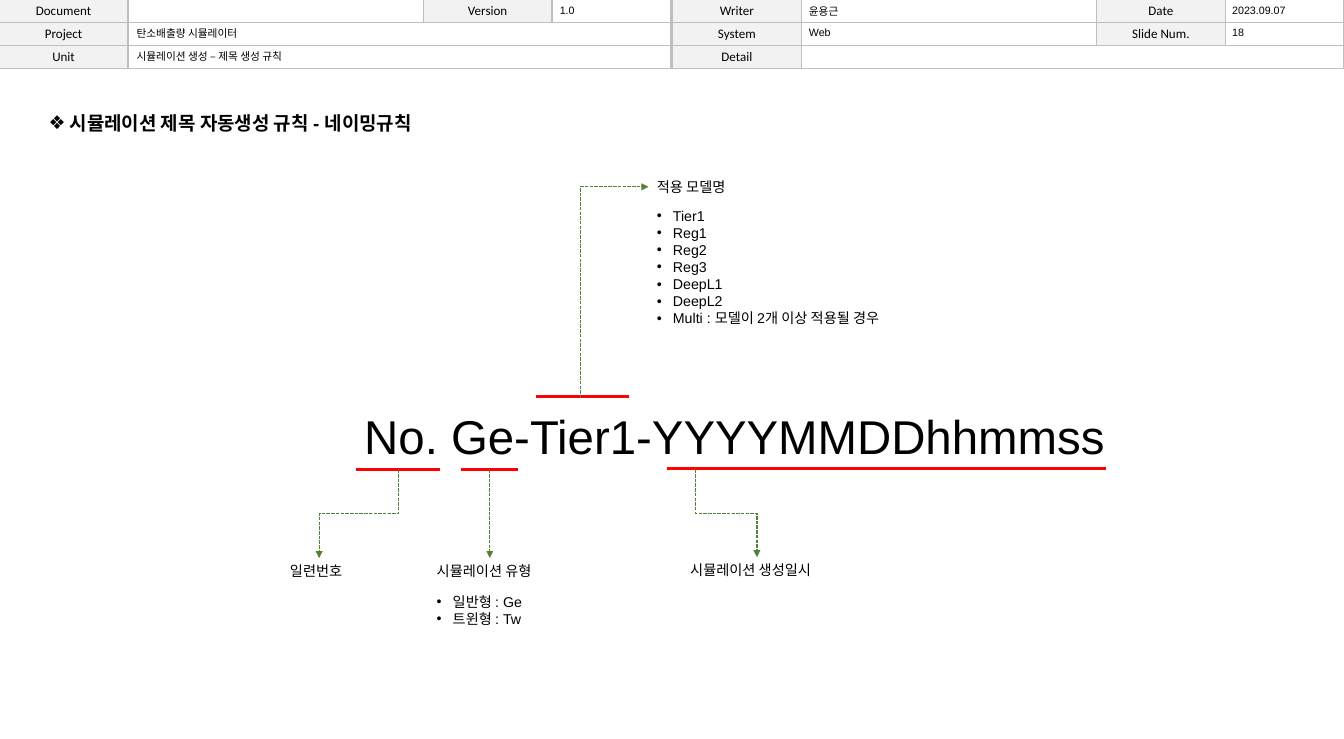
import pptx
import pptx.util
import pptx.dml.color
import pptx.enum.dml
import pptx.enum.shapes
import pptx.enum.text
import pptx.oxml
import pptx.oxml.ns

Pt = pptx.util.Pt
qn = pptx.oxml.ns.qn
KIND = pptx.enum.shapes.MSO_CONNECTOR

# Content
LABELS = [  # label, column slot, row
    ("Document", 0, 0), ("Project", 0, 1), ("Unit", 0, 2),
    ("Writer", 2, 0), ("System", 2, 1), ("Detail", 2, 2),
    ("Version", 1, 0), ("Date", 3, 0), ("Slide Num.", 3, 1),
]
VALUES = [  # row, column, text
    (0, 3, "1.0"), (0, 5, "윤용근"), (0, 7, "2023.09.07"),
    (1, 1, "탄소배출량 시뮬레이터"), (1, 5, "Web"), (1, 7, "18"),
    (2, 1, "시뮬레이션 생성 – 제목 생성 규칙"),
]
MERGES = [(1, 1), (2, 1), (2, 5)]  # row, first of three columns
TEXTS = [  # left, top, width, height, style, bullet, lines
    (300.24, 339.84, 641.52, 55.44, "code", None, ["No. Ge-Tier1-YYYYMMDDhhmmss"]),
    (237.6, 470.88, 63.36, 21.6, "note", None, ["일련번호"]),
    (361.44, 470.88, 103.68, 21.6, "note", None, ["시뮬레이션 유형"]),
    (361.44, 496.8, 90.72, 36, "note", "•", ["일반형 : Ge", "트윈형 : Tw"]),
    (547.2, 146.88, 79.2, 21.6, "note", None, ["적용 모델명"]),
    (547.2, 171.36, 224.64, 108.72, "note", "•",
     ["Tier1", "Reg1", "Reg2", "Reg3", "DeepL1", "DeepL2",
      "Multi : 모델이 2개 이상 적용될 경우"]),
    (575.28, 470.16, 128.16, 21.6, "note", None, ["시뮬레이션 생성일시"]),
    (33.84, 90.72, 360.72, 26.64, "title", "❖",
     [" 시뮬레이션 제목 자동생성 규칙 - 네이밍규칙"]),
]
MARKS = [  # left, right, y
    (300.24, 371.52, 396), (388.8, 437.04, 396),
    (452.16, 530.64, 334.8), (563.04, 933.12, 395.28),
]
ARROWS = [  # from x, y, to x, y, number of bends
    (336.24, 396, 269.28, 470.88, 2), (413.28, 396, 413.28, 470.88, 0),
    (489.6, 336.24, 547.2, 157.68, 1), (586.8, 396, 638.64, 470.16, 2),
]

# Theme and measures
THEME = {
    "ink": "000000", "grid": "BFBFBF", "label": "F2F2F2",
    "mark": "FF0000", "arrow": "548235",
    "head": ("Calibri", 11, False), "cell": ("Arial", 9, False),
    "code": ("Arial", 40, False), "note": ("Arial", 12, False),
    "title": ("Arial", 16, True),
}
WIDE, HIGH = 1134, 623.52
EDGE, BAR = -0.72, 19.44
HALF, LABEL = 567.36, 108.72
SLOTS = [EDGE, 357.12, 567.36, 925.2]
COLS = [108, 249.12, 108, 102.24] * 2
ROW = 18.72
INDENT = 13.5

deck = pptx.Presentation()
deck.slide_width, deck.slide_height = Pt(WIDE), Pt(HIGH)
slide = deck.slides.add_slide(deck.slide_layouts[6])
parts = slide.shapes


def color(name):
    return pptx.dml.color.RGBColor.from_string(THEME[name])


def write(para, text, style):
    run = para.add_run()
    run.text = text
    run.font.name, size, run.font.bold = THEME[style]
    run.font.size = Pt(size)
    run.font.color.rgb = color("ink")


def block(left, top, width, fill=None):
    rect = parts.add_shape(pptx.enum.shapes.MSO_SHAPE.RECTANGLE,
                           Pt(left), Pt(top), Pt(width), Pt(BAR))
    rect.shadow.inherit = False
    if fill:
        rect.fill.solid()
        rect.fill.fore_color.rgb = color(fill)
    else:
        rect.fill.background()
    rect.line.color.rgb = color("grid")
    rect.line.width = Pt(1)
    return rect


def link(kind, ends, tint, width):
    line = parts.add_connector(kind, *[Pt(n) for n in ends])
    line.line.color.rgb = color(tint)
    line.line.width = Pt(width)
    pptx.oxml.ns  # namespace helpers
    props = line._element.spPr
    props.append(props.makeelement(qn("a:effectLst"), {}))
    return line


def arrow(x1, y1, x2, y2, bends):
    kind, ends = KIND.STRAIGHT, (x1, y1, x2, y2)
    if bends:  # the unturned frame swaps width and height about the centre
        kind = KIND.ELBOW
        mx, my = (x1 + x2) / 2, (y1 + y2) / 2
        dx, dy = abs(x2 - x1) / 2, abs(y2 - y1) / 2
        ends = (mx - dy, my - dx, mx + dy, my + dx)
    line = link(kind, ends, "arrow", 1)
    line.line.dash_style = pptx.enum.dml.MSO_LINE.SQUARE_DOT
    props = line._element.spPr
    edge = props.find(qn("a:ln"))
    edge.append(edge.makeelement(qn("a:tailEnd"), {"type": "triangle"}))
    if bends:
        frame = props.find(qn("a:xfrm"))
        up, right = y2 < y1, x2 > x1
        frame.set("rot", str((270 if right and not up else 90) * 60000))
        frame.set("flipH", str(int(right)))
        frame.set("flipV", str(int(up and right)))
        if bends == 1:
            props.find(qn("a:prstGeom")).set("prst", "bentConnector2")


def bullet(para, sign):
    props = para._p.get_or_add_pPr()
    props.set("marL", str(Pt(INDENT)))
    props.set("indent", str(-Pt(INDENT)))
    for tag, key, value in (("a:buFont", "typeface", "Arial"),
                            ("a:buChar", "char", sign)):
        props.append(props.makeelement(qn(tag), {key: value}))


# Header frame and labels
for left in (EDGE, HALF + 2 * EDGE):
    for row in range(3):
        block(left, EDGE + row * BAR, HALF)
for text, slot, row in LABELS:
    frame = block(SLOTS[slot], EDGE + row * BAR, LABEL, "label").text_frame
    frame.margin_top = frame.margin_bottom = 0
    frame.vertical_anchor = pptx.enum.text.MSO_ANCHOR.MIDDLE
    frame.paragraphs[0].alignment = pptx.enum.text.PP_ALIGN.CENTER
    write(frame.paragraphs[0], text, "head")

# Header values
table = parts.add_table(3, len(COLS), 0, 0, Pt(sum(COLS)), Pt(3 * ROW)).table
table.first_row = table.horz_banding = False
plain = "{2D5ABB26-0587-4C30-8999-92F81FD0307C}"
table._tbl.tblPr.find(qn("a:tableStyleId")).text = plain
for col, width in zip(table.columns, COLS):
    col.width = Pt(width)
for row in table.rows:
    row.height = Pt(ROW)
for cell in table.iter_cells():
    cell.fill.background()
    cell.margin_top = cell.margin_bottom = 0
    cell.vertical_anchor = pptx.enum.text.MSO_ANCHOR.MIDDLE
    last = cell.text_frame.paragraphs[0]._p.get_or_add_endParaRPr()
    last.set("sz", str(THEME["cell"][1] * 100))
for row, col in MERGES:
    table.cell(row, col).merge(table.cell(row, col + 2))
for row, col, text in VALUES:
    write(table.cell(row, col).text_frame.paragraphs[0], text, "cell")

# Naming rule and its notes
for left, top, width, height, style, sign, lines in TEXTS:
    box = parts.add_textbox(Pt(left), Pt(top), Pt(width), Pt(height))
    frame = box.text_frame
    frame.word_wrap = False
    frame.auto_size = pptx.enum.text.MSO_AUTO_SIZE.SHAPE_TO_FIT_TEXT
    for num, text in enumerate(lines):
        para = frame.add_paragraph() if num else frame.paragraphs[0]
        if sign:
            bullet(para, sign)
        write(para, text, style)

# Red marks and arrows
for left, right, y in MARKS:
    link(KIND.STRAIGHT, (left, y, right, y), "mark", 2.25)
for item in ARROWS:
    arrow(*item)

deck.save("out.pptx")
